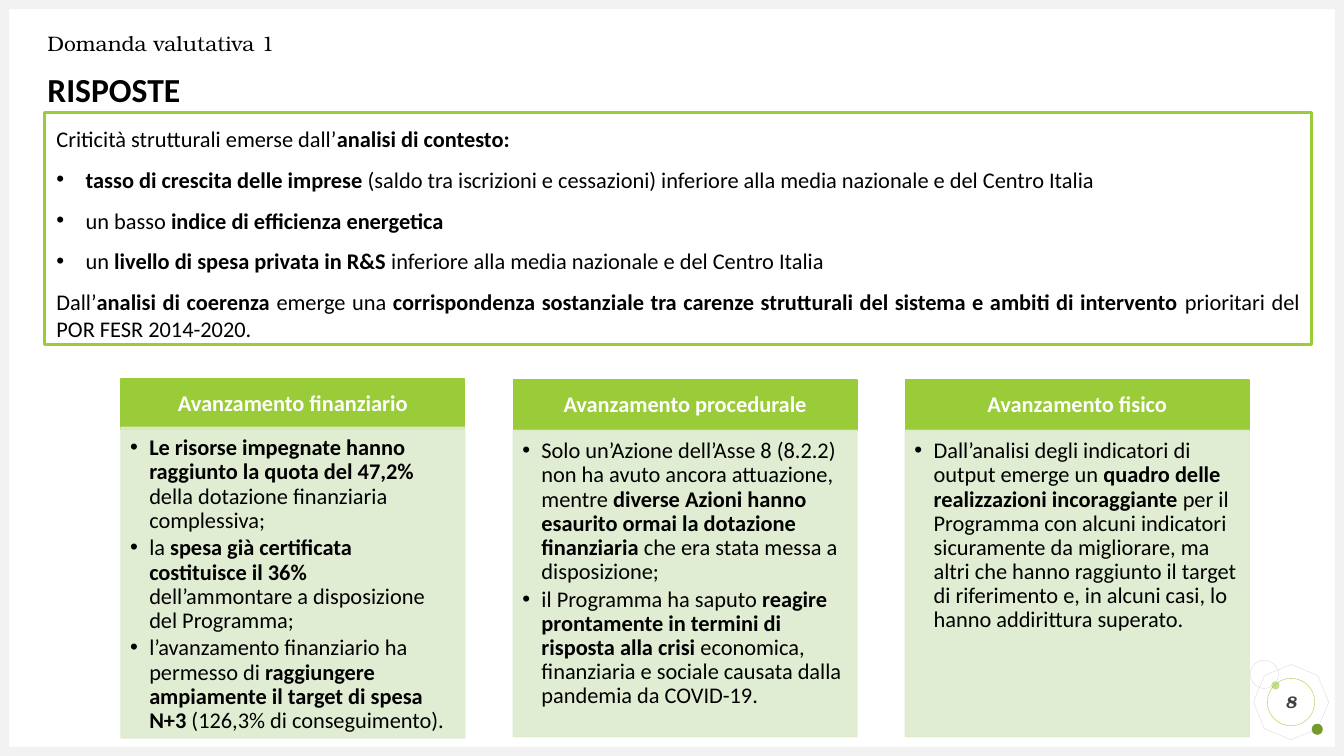
from lxml import etree
from pptx import Presentation
from pptx.dml.color import RGBColor
from pptx.enum.shapes import MSO_SHAPE
from pptx.enum.text import MSO_ANCHOR, MSO_AUTO_SIZE, PP_ALIGN
from pptx.oxml.ns import qn
from pptx.util import Inches, Pt

RECT, ELLIPSE, OCTAGON = MSO_SHAPE.RECTANGLE, MSO_SHAPE.OVAL, MSO_SHAPE.OCTAGON
TOP, MIDDLE = MSO_ANCHOR.TOP, MSO_ANCHOR.MIDDLE
LEFT, CENTER, JUSTIFY = PP_ALIGN.LEFT, PP_ALIGN.CENTER, PP_ALIGN.JUSTIFY
NO_AUTOFIT = MSO_AUTO_SIZE.NONE

SANS, SERIF = "Calibri", "TeX Gyre Bonum"
GREEN, PALE_GREEN, LIGHT_GREEN, DARK_GREEN = "9ACB39", "DEECCE", "C2E088", "749A29"
BLACK, WHITE, DARK_GREY, GREY, FRAME_GREY = "000000", "FFFFFF", "404040", "D9D9D9", "F2F2F2"

CONTEXT = [
    ("Criticità strutturali emerse dall’*analisi di contesto:*", False),
    ("*tasso di crescita delle imprese *(saldo tra iscrizioni e cessazioni) "
     "inferiore alla media nazionale e del Centro Italia", True),
    ("un basso *indice di efficienza energetica*", True),
    ("un *livello di spesa privata in R&S *inferiore alla media nazionale e del Centro Italia", True),
    ("Dall’*analisi di coerenza *emerge una *corrispondenza sostanziale tra carenze strutturali "
     "del sistema e ambiti di intervento *prioritari del POR FESR 2014-2020.", False),
]

PROGRESS = [
    ("Avanzamento finanziario", 3.76, 4.24, 7.32, [
        "*Le risorse impegnate hanno raggiunto la quota del 47,2%* della dotazione finanziaria complessiva;",
        "la *spesa già certificata costituisce il 36%* dell’ammontare a disposizione del Programma;",
        "l’avanzamento finanziario ha permesso di *raggiungere ampiamente il target di spesa N+3* "
        "(126,3% di conseguimento).",
    ]),
    ("Avanzamento procedurale", 3.77, 4.27, 7.31, [
        "Solo un’Azione dell’Asse 8 (8.2.2) non ha avuto ancora attuazione, mentre *diverse Azioni hanno "
        "esaurito ormai la dotazione finanziaria* che era stata messa a disposizione;",
        "il Programma ha saputo *reagire prontamente in termini di risposta alla crisi* economica, "
        "finanziaria e sociale causata dalla pandemia da COVID-19.",
    ]),
    ("Avanzamento fisico", 3.77, 4.27, 7.31, [
        "Dall’analisi degli indicatori di output emerge un *quadro delle realizzazioni incoraggiante* "
        "per il Programma con alcuni indicatori sicuramente da migliorare, ma altri che hanno raggiunto "
        "il target di riferimento e, in alcuni casi, lo hanno addirittura superato.",
    ]),
]


def rgb(colour):
    """Turn a hex string into a colour."""
    return RGBColor.from_string(colour)


def add_box(slide, kind, box, fill=None, line=None, width=1, rotation=0):
    """Add a flat preset shape with optional fill and outline."""
    shape = slide.shapes.add_shape(kind, *(Inches(length) for length in box))
    shape.shadow.inherit = False
    shape.rotation = rotation
    if fill:
        shape.fill.solid()
        shape.fill.fore_color.rgb = rgb(fill)
    else:
        shape.fill.background()
    if line:
        shape.line.color.rgb = rgb(line)
        shape.line.width = Pt(width)
    else:
        shape.line.fill.background()
    return shape


def set_opacity(shape, percent):
    """Make the fill and outline of a shape partly transparent."""
    for colour in shape.fill._xPr.iter(qn("a:srgbClr")):
        etree.SubElement(colour, qn("a:alpha")).set("val", str(percent * 1000))


def set_frame(shape, insets=(0, 0, 0, 0), anchor=TOP):
    """Set wrapping, insets and vertical anchor, and return the text frame."""
    frame = shape.text_frame
    frame.word_wrap = True
    frame.auto_size = NO_AUTOFIT
    frame.vertical_anchor = anchor
    frame.margin_left, frame.margin_top, frame.margin_right, frame.margin_bottom = (
        Inches(inset) for inset in insets)
    return frame


def add_runs(paragraph, text, size, font=SANS, colour=BLACK, italic=False):
    """Write text run by run; parts between asterisks are bold."""
    for index, part in enumerate(text.split("*")):
        if part:
            run = paragraph.add_run()
            run.text = part
            run.font.name = font
            run.font.size = Pt(size)
            run.font.bold = index % 2 == 1
            run.font.italic = italic
            run.font.color.rgb = rgb(colour)


def set_paragraph(paragraph, align=LEFT, spacing=1.0, before=0, after=0, indent=0):
    """Set alignment and spacing; a positive indent adds a hanging bullet."""
    paragraph.alignment = align
    paragraph.line_spacing = spacing
    paragraph.space_before = Pt(before)
    paragraph.space_after = Pt(after)
    if indent:
        properties = paragraph._p.get_or_add_pPr()
        properties.set("marL", str(Inches(indent)))
        properties.set("indent", str(-Inches(indent)))
        etree.SubElement(properties, qn("a:buFont")).set("typeface", "Arial")
        etree.SubElement(properties, qn("a:buChar")).set("char", "•")


def next_paragraph(frame, index):
    """Return the first paragraph of a frame, or a new one after it."""
    return frame.add_paragraph() if index else frame.paragraphs[0]


def add_decoration(slide):
    """Draw the grey slide border and the page number ornament."""
    for border in ((0, 7.41, 13.33, 0.09), (0, 0, 13.33, 0.09),
                   (0, 0, 0.09, 7.5), (13.24, 0, 0.09, 7.5)):
        add_box(slide, RECT, border, FRAME_GREY)
    add_box(slide, OCTAGON, (12.46, 6.62, 0.69, 0.69), line=GREY, width=0.25, rotation=22.7)
    add_box(slide, ELLIPSE, (12.61, 6.76, 0.08, 0.08), LIGHT_GREEN)
    add_box(slide, ELLIPSE, (13.01, 7.18, 0.11, 0.11), DARK_GREEN)
    add_box(slide, ELLIPSE, (12.4, 6.55, 0.28, 0.28), line=GREY, width=0.25)


def add_page_number(slide, number):
    """Add the circled page number."""
    circle = add_box(slide, ELLIPSE, (12.57, 6.73, 0.47, 0.47), line=GREEN, width=0.25)
    paragraph = set_frame(circle, anchor=MIDDLE).paragraphs[0]
    set_paragraph(paragraph, CENTER)
    add_runs(paragraph, f"*{number}*", 12, SERIF, DARK_GREY, italic=True)


def add_headings(slide):
    """Fill the title and add the heading below it."""
    title = slide.shapes.title
    title.left, title.top, title.width, title.height = (
        Inches(length) for length in (0.47, 0.21, 12.4, 0.47))
    question = set_frame(title, anchor=MIDDLE).paragraphs[0]
    set_paragraph(question, spacing=0.9)
    add_runs(question, "Domanda valutativa 1", 15, SERIF)

    answers = slide.shapes.add_textbox(Inches(0.47), Inches(0.73), Inches(5.98), Inches(0.39))
    heading = set_frame(answers).paragraphs[0]
    set_paragraph(heading, spacing=0.9, before=10)
    add_runs(heading, "*RISPOSTE*", 24)


def add_context(slide):
    """Add the outlined panel with the findings of the context analysis."""
    panel = add_box(slide, RECT, (0.44, 1.12, 12.57, 2.3), WHITE, GREEN, 2.25)
    frame = set_frame(panel, (0.12, 0.12, 0.12, 0))
    for index, (text, bulleted) in enumerate(CONTEXT):
        paragraph = next_paragraph(frame, index)
        set_paragraph(paragraph, JUSTIFY, before=10, indent=0.29 if bulleted else 0)
        add_runs(paragraph, text, 16)


def add_progress_column(slide, left, heading, top, body_top, bottom, points):
    """Add a green header with a pale bulleted panel below it."""
    width = 3.41
    header = add_box(slide, RECT, (left, top, width, 0.5), GREEN, GREEN)
    paragraph = set_frame(header, (0.12, 0.07, 0.12, 0.07), MIDDLE).paragraphs[0]
    set_paragraph(paragraph, CENTER, 0.9)
    add_runs(paragraph, f"*{heading}*", 16, colour=WHITE)

    body = add_box(slide, RECT, (left, body_top, width, bottom - body_top), PALE_GREEN, PALE_GREEN)
    set_opacity(body, 90)
    frame = set_frame(body, (0.09, 0.09, 0.12, 0.14))
    for index, point in enumerate(points):
        paragraph = next_paragraph(frame, index)
        set_paragraph(paragraph, spacing=0.9, after=2.4, indent=0.19)
        add_runs(paragraph, point, 16)


def main():
    """Build the slide and save it."""
    presentation = Presentation()
    presentation.slide_width, presentation.slide_height = Inches(13.33), Inches(7.5)
    slide = presentation.slides.add_slide(presentation.slide_layouts[5])
    add_decoration(slide)
    add_headings(slide)
    add_context(slide)
    add_page_number(slide, 8)
    for index, column in enumerate(PROGRESS):
        add_progress_column(slide, 1.2 + 3.89 * index, *column)
    presentation.save("out.pptx")


if __name__ == "__main__":
    main()
